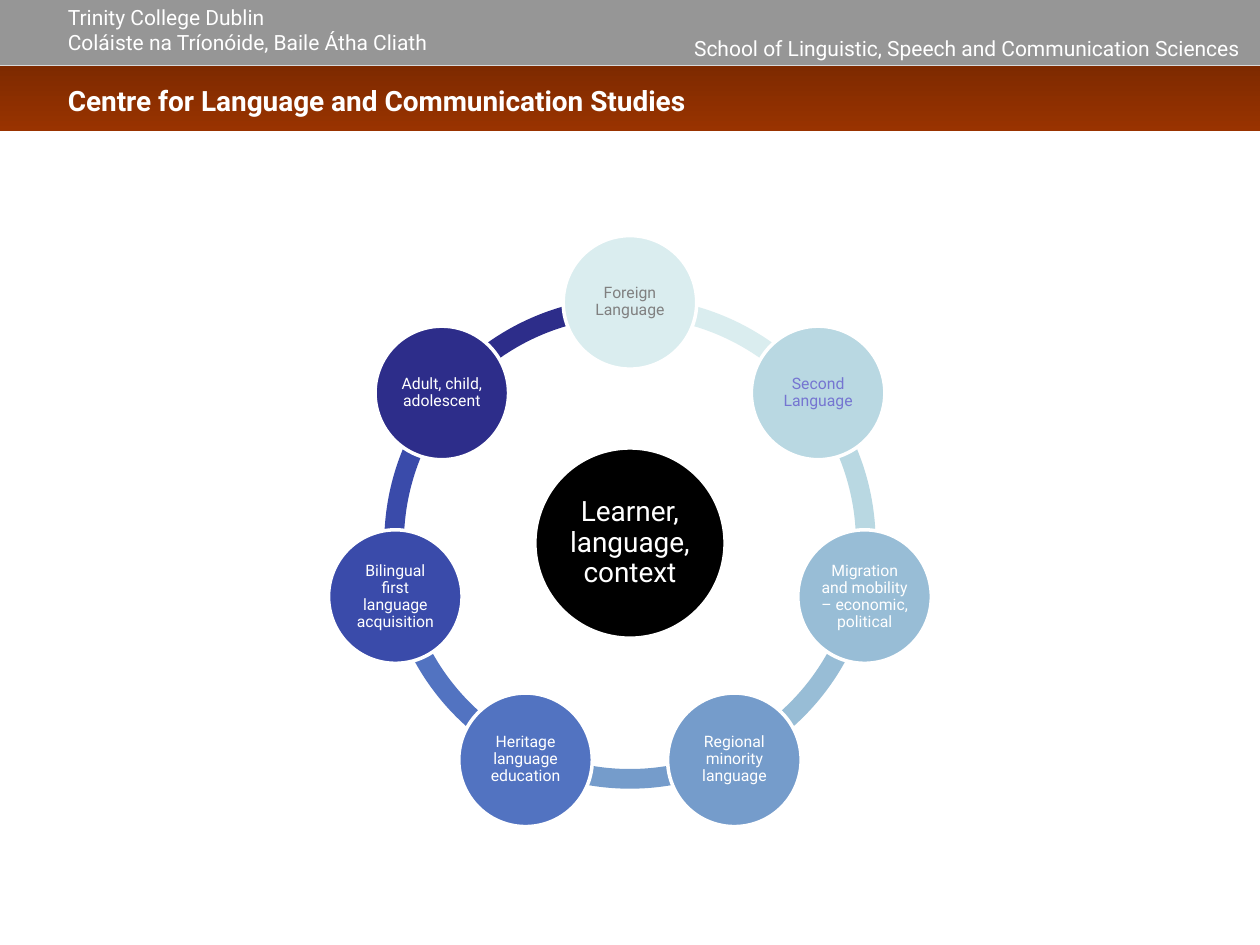
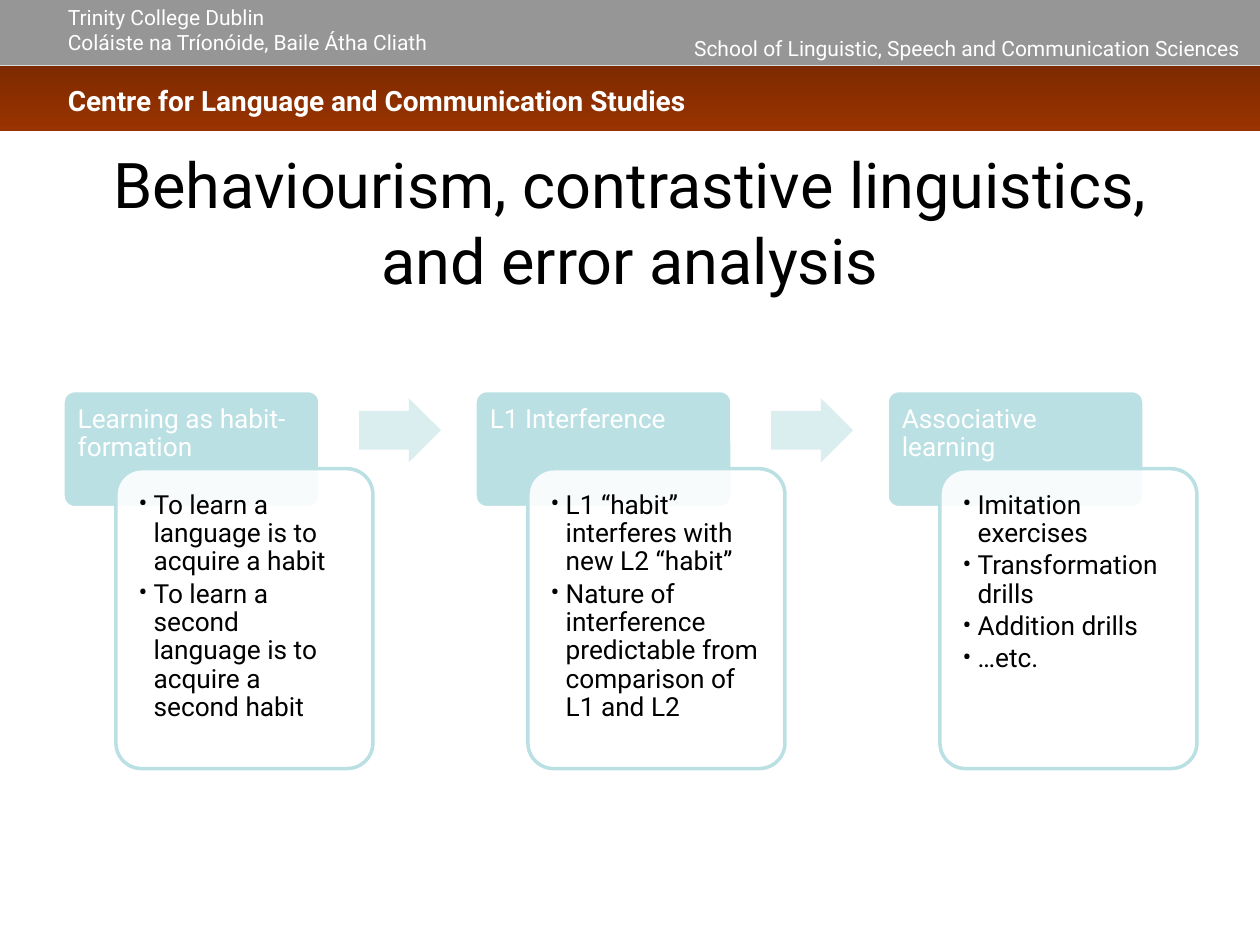
from math import cos, radians, sin

from lxml.etree import SubElement
from pptx import Presentation
from pptx.dml.color import RGBColor
from pptx.enum.shapes import MSO_SHAPE
from pptx.enum.text import MSO_ANCHOR, PP_ALIGN
from pptx.oxml.ns import qn
from pptx.util import Inches, Pt

FONT = "Roboto"
WHITE, BLACK, GREY = "FFFFFF", "000000", "969696"
BAND_TOP, BAND_BOTTOM = "7E2A00", "993300"
TEAL, PALE_TEAL = "BBE0E3", "DAEDEF"

CONTEXTS = [
    ("Foreign Language", PALE_TEAL, "808080"),
    ("Second Language", "B9D8E2", "7575D1"),
    ("Migration and mobility – economic, political", "98BDD6", WHITE),
    ("Regional minority language", "759CCB", WHITE),
    ("Heritage language education", "5273C1", WHITE),
    ("Bilingual first language acquisition", "3A4BAA", WHITE),
    ("Adult, child, adolescent", "2D2D8A", WHITE),
]

STAGES = [
    ("Learning as habit-formation", [
        "To learn a language is to acquire a habit",
        "To learn a second language is to acquire a second habit",
    ]),
    ("L1 Interference", [
        "L1 “habit” interferes with new L2 “habit”",
        "Nature of interference predictable from comparison of L1 and L2",
    ]),
    ("Associative learning", [
        "Imitation exercises",
        "Transformation drills",
        "Addition drills",
        "…etc.",
    ]),
]


def color(value):
    return RGBColor.from_string(value)


def write(frame, text, *, size, ink=WHITE, bold=False, align=PP_ALIGN.LEFT,
          anchor=MSO_ANCHOR.TOP, insets=(0.1, 0.05, 0.1, 0.05),
          spacing=1.0, before=0, after=0, bullet=False):
    frame.word_wrap = True
    frame.vertical_anchor = anchor
    (frame.margin_left, frame.margin_top,
     frame.margin_right, frame.margin_bottom) = map(Inches, insets)
    lines = [text] if isinstance(text, str) else text
    for index, line in enumerate(lines):
        paragraph = frame.add_paragraph() if index else frame.paragraphs[0]
        paragraph.alignment = align
        paragraph.line_spacing = spacing
        if index and before:
            paragraph.space_before = Pt(before)
        if after:
            paragraph.space_after = Pt(after)
        if bullet:
            properties = paragraph._p.get_or_add_pPr()
            properties.set("marL", str(Inches(0.12)))
            properties.set("indent", str(Inches(-0.12)))
            SubElement(properties, qn("a:buFont")).set("typeface", FONT)
            SubElement(properties, qn("a:buChar")).set("char", "•")
        run = paragraph.add_run()
        run.text = line
        run.font.name = FONT
        run.font.size = Pt(size)
        run.font.bold = bold
        run.font.color.rgb = color(ink)


class Deck:
    def __init__(self):
        self.presentation = Presentation()
        self.presentation.slide_width = Inches(10)
        self.presentation.slide_height = Inches(7.5)
        self.slide = None

    def shape(self, kind, left, top, width, height, fill,
              outline=None, adjust=(), opacity=None):
        shape = self.slide.shapes.add_shape(
            kind, Inches(left), Inches(top), Inches(width), Inches(height))
        shape.shadow.inherit = False
        for index, value in enumerate(adjust):
            shape.adjustments[index] = value
        if isinstance(fill, tuple):
            shape.fill.gradient()
            shape.fill.gradient_angle = 270
            for stop, shade in zip(shape.fill.gradient_stops, fill):
                stop.color.rgb = color(shade)
        else:
            shape.fill.solid()
            shape.fill.fore_color.rgb = color(fill)
        if opacity:
            solid = shape._element.spPr.find(qn("a:solidFill"))
            SubElement(solid[0], qn("a:alpha")).set("val", str(opacity * 1000))
        if outline:
            shape.line.color.rgb = color(outline)
            shape.line.width = Pt(2)
        else:
            shape.line.fill.background()
        return shape

    def text(self, left, top, width, height, content, **style):
        box = self.slide.shapes.add_textbox(
            Inches(left), Inches(top), Inches(width), Inches(height))
        write(box.text_frame, content, **style)

    def disc(self, x, y, diameter, fill, label, **style):
        disc = self.shape(MSO_SHAPE.OVAL, x - diameter / 2, y - diameter / 2,
                          diameter, diameter, fill, outline=WHITE)
        write(disc.text_frame, label, align=PP_ALIGN.CENTER,
              anchor=MSO_ANCHOR.MIDDLE, spacing=0.9, insets=(0.02,) * 4, **style)

    def card(self, left, top, height, fill, outline, content, insets,
             opacity=None, **style):
        card = self.shape(MSO_SHAPE.ROUNDED_RECTANGLE, left, top, 2.04, height,
                          fill, outline, adjust=(0.1,), opacity=opacity)
        write(card.text_frame, content, size=15, spacing=0.9, insets=insets, **style)

    def new_slide(self):
        self.slide = self.presentation.slides.add_slide(
            self.presentation.slide_layouts[6])
        self.shape(MSO_SHAPE.RECTANGLE, 0, 0, 10, 0.52, GREY)
        self.text(4.94, 0.23, 5, 0.29,
                  "School of Linguistic, Speech and Communication Sciences",
                  size=12, align=PP_ALIGN.RIGHT)
        self.text(0.44, 0.02, 3.3, 0.45,
                  ["Trinity College Dublin",
                   "Coláiste na Tríonóide, Baile Átha Cliath"],
                  size=12, spacing=0.85, before=1.8)
        self.shape(MSO_SHAPE.RECTANGLE, 0, 0.52, 10, 0.52, (BAND_TOP, BAND_BOTTOM))
        self.text(0.44, 0.52, 9.5, 0.56,
                  "Centre for Language and Communication Studies",
                  size=16, bold=True, anchor=MSO_ANCHOR.MIDDLE)

    def title(self, content):
        self.text(0.5, 1.13, 9, 1.25, content, size=36, ink=BLACK,
                  align=PP_ALIGN.CENTER, anchor=MSO_ANCHOR.MIDDLE)


def learner_cycle(deck):
    deck.new_slide()
    center_x, center_y, orbit, ring = 5, 4.31, 1.91, 3.9
    step = 360 / len(CONTEXTS)
    angles = [(270 + step * index) % 360 for index in range(len(CONTEXTS))]
    for angle, (_, fill, _) in reversed(list(zip(angles, CONTEXTS))):
        deck.shape(MSO_SHAPE.BLOCK_ARC, center_x - ring / 2, center_y - ring / 2,
                   ring, ring, fill,
                   adjust=(angle * 0.6, (angle + step) % 360 * 0.6, 0.04))
    deck.disc(center_x, center_y, 1.51, BLACK, "Learner, language, context", size=16)
    for angle, (label, fill, ink) in zip(angles, CONTEXTS):
        deck.disc(center_x + orbit * cos(radians(angle)),
                  center_y + orbit * sin(radians(angle)),
                  1.06, fill, label, size=9, ink=ink)


def behaviourism(deck):
    deck.new_slide()
    deck.title("Behaviourism, contrastive linguistics, and error analysis")
    for index, (heading, points) in enumerate(STAGES):
        left = 0.5 + 3.27 * index
        deck.card(left, 3.1, 0.93, TEAL, WHITE, heading, (0.09, 0.09, 0.09, 0.06))
        deck.card(left + 0.42, 3.72, 2.38, WHITE, TEAL, points, (0.12,) * 4,
                  opacity=90, ink=BLACK, after=2.25, bullet=True)
        if index < len(STAGES) - 1:
            deck.shape(MSO_SHAPE.RIGHT_ARROW, left + 2.35, 3.16, 0.65, 0.51,
                       PALE_TEAL, adjust=(0.6, 0.5))


def main():
    deck = Deck()
    learner_cycle(deck)
    behaviourism(deck)
    deck.presentation.save("out.pptx")


if __name__ == "__main__":
    main()
